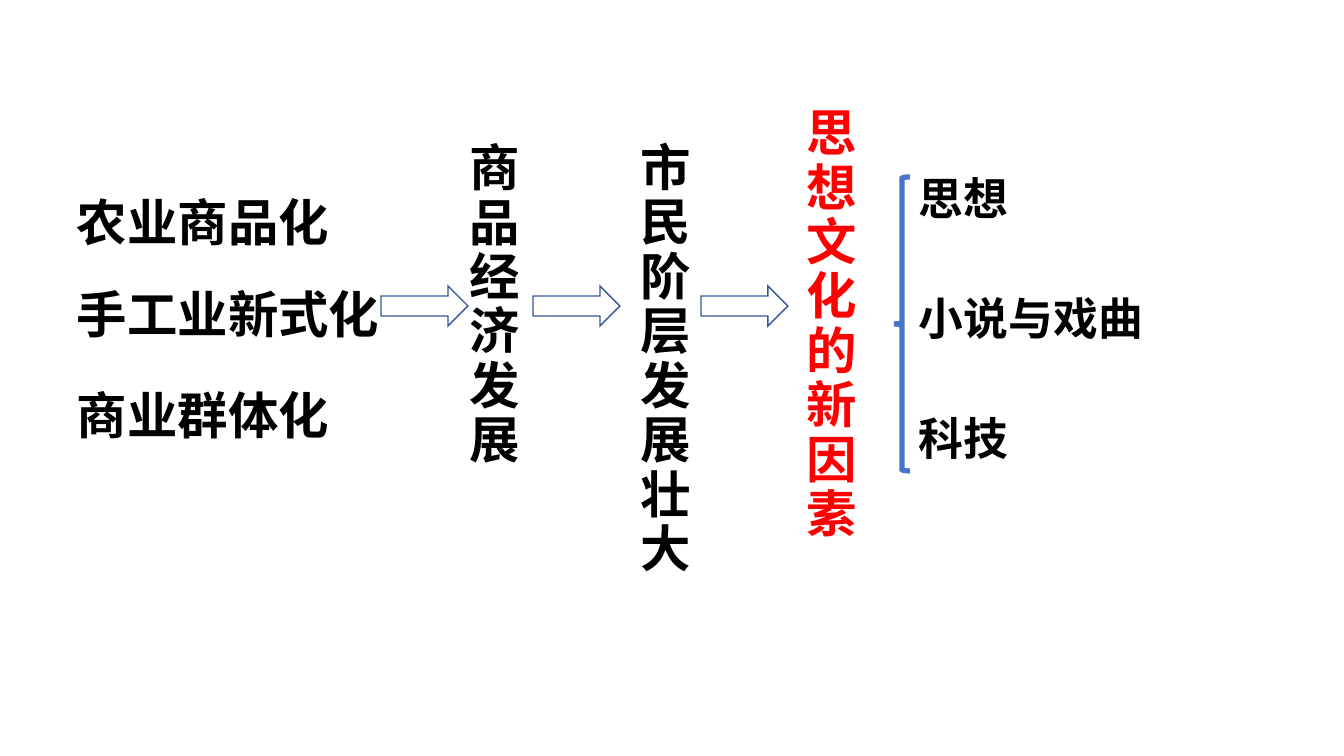
from lxml.etree import SubElement
from pptx import Presentation
from pptx.dml.color import RGBColor
from pptx.enum.shapes import MSO_SHAPE
from pptx.oxml.ns import qn
from pptx.util import Emu, Pt

FONT = "Noto Sans CJK SC"
COLORS = {"text": "000000", "accent": "FF0000", "arrow": "355696", "brace": "4874CB"}


def px(n):
    return Emu(round(n * 914400 / 100.8))


def add_text(slide, box, lines, size=36, color="text", spacing=0.9, inset=(7, 4)):
    tf = slide.shapes.add_textbox(*map(px, box)).text_frame
    tf.word_wrap = True
    tf.margin_left = tf.margin_right = px(inset[0])
    tf.margin_top = tf.margin_bottom = px(inset[1])
    tf.text = "\n".join(lines)
    for p in tf.paragraphs:
        p.line_spacing = spacing
        p.font.size = Pt(size)
        p.font.bold = True
        p.font.name = FONT
        p.font.color.rgb = RGBColor.from_string(COLORS[color])
        for r in p.runs:
            r.font.name = FONT
            # East Asian glyphs take their typeface from a:ea
            SubElement(r.font._element, qn("a:ea"), typeface=FONT)


def add_outline(slide, kind, box, color, width):
    sp = slide.shapes.add_shape(kind, *map(px, box))
    sp.shadow.inherit = False
    sp.fill.background()
    sp.line.color.rgb = RGBColor.from_string(COLORS[color])
    sp.line.width = Pt(width)
    SubElement(sp.line._get_or_add_ln(), qn("a:miter"), lim="800000")


def add_causes(slide, left, top):
    causes = [("农业商品化", 0, 311, 49), ("手工业新式化", 92, 732, 69),
              ("商业群体化", 193, 311, 69)]
    for text, dy, width, height in causes:
        add_text(slide, (left, top + dy, width, height), [text])


def add_chain(slide, left, top):
    """Columns narrower than two characters, so each character takes a line."""
    columns = [(["商品", "经济", "发展"], 82, 35, 100, 129, "text"),
               (["市民阶层", "发展壮大"], 253, 35, 112, 170, "text"),
               (["思想文化的新因素"], 419, 0, 80, 356, "accent")]
    for lines, dx, dy, width, height, color in columns:
        add_text(slide, (left + dx, top + dy, width, height), lines, color=color)
    for dx in (0, 152, 320):
        add_outline(slide, MSO_SHAPE.RIGHT_ARROW, (left + dx, top + 182, 87, 40), "arrow", 1)


def add_results(slide, left, top):
    add_outline(slide, MSO_SHAPE.LEFT_BRACE, (left, top + 11, 16, 294), "brace", 3.75)
    for i, text in enumerate(["思想", "小说与戏曲", "科技"]):
        add_text(slide, (left + 15, top + 120 * i, 414, 102), [text],
                 size=32, spacing=1.0, inset=(10, 5))


def main():
    prs = Presentation()
    prs.slide_width, prs.slide_height = px(1344), px(756)
    slide = prs.slides.add_slide(prs.slide_layouts[6])
    add_causes(slide, 70, 194)
    add_chain(slide, 381, 104)
    add_results(slide, 894, 166)
    prs.save("out.pptx")


if __name__ == "__main__":
    main()
